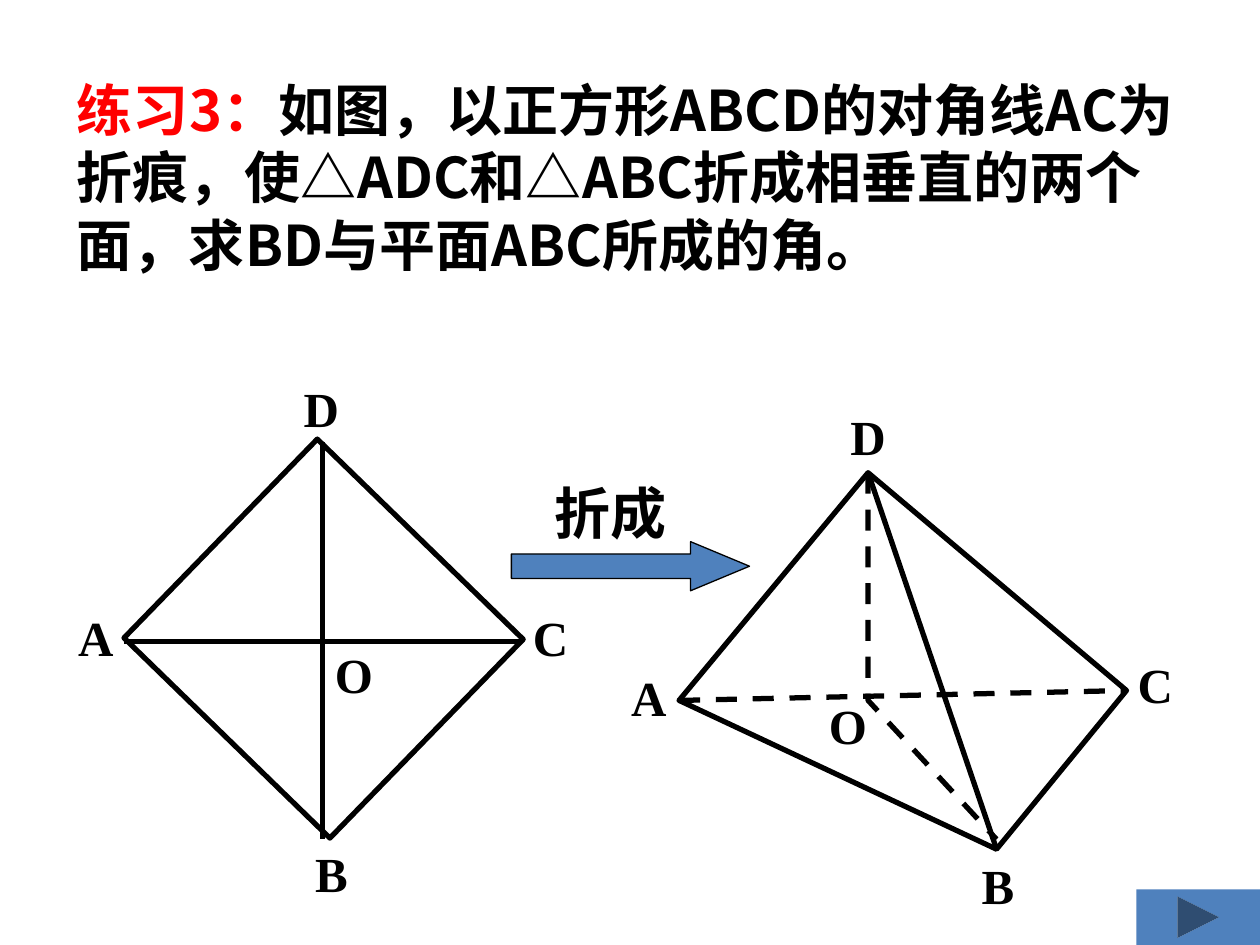
from lxml.etree import SubElement
from pptx import Presentation
from pptx.dml.color import RGBColor
from pptx.enum.dml import MSO_LINE as Dash
from pptx.enum.shapes import MSO_CONNECTOR as Link, MSO_SHAPE as Kind
from pptx.enum.text import MSO_ANCHOR as Anchor, PP_ALIGN as Align
from pptx.oxml.ns import qn
from pptx.util import Cm, Pt

HUES = {"ink": "000000", "red": "FF0000", "blue": "4F81BD"}
SANS, JP, ROMAN = "Noto Sans CJK SC", "Noto Sans CJK JP", "Times New Roman"


def hue(name):
    return RGBColor.from_string(HUES[name])


def style(line, width=3, dash=None):
    for key, value in {"width": Pt(width), "dash_style": dash}.items():
        setattr(line, key, value)
    line.color.rgb = hue("ink")


def write(para, text, size, face, asian=SANS, color="ink"):
    run = para.add_run()
    run.text = text
    for key, value in {"size": Pt(size), "name": face, "bold": True}.items():
        setattr(run.font, key, value)
    run.font.color.rgb = hue(color)
    SubElement(run.font._element, qn("a:ea")).set("typeface", asian)


def text_box(slide, x, y, w, h, wrap=True, align=Align.LEFT):
    frame = slide.shapes.add_textbox(Cm(x), Cm(y), Cm(w), Cm(h)).text_frame
    for key, value in {"word_wrap": wrap, "vertical_anchor": Anchor.TOP}.items():
        setattr(frame, key, value)
    para = frame.paragraphs[0]
    para.alignment = align
    return para


def label(slide, x, y, text):
    """Place a point name centred on x, y."""
    w, h = 1.22, 1.45
    para = text_box(slide, x - w / 2, y - h / 2, w, h, False, Align.CENTER)
    write(para, text, 28, ROMAN)


def segment(slide, start, end, dash=None):
    ends = [Cm(n) for n in (*start, *end)]
    link = slide.shapes.add_connector(Link.STRAIGHT, *ends)
    style(link.line, dash=dash)
    SubElement(link._element.spPr, qn("a:effectLst"))


def outline(slide, points, close, dash=None):
    spots = [(Cm(x), Cm(y)) for x, y in points]
    pen = slide.shapes.build_freeform(*spots[0])
    pen.add_line_segments(spots[1:], close=close)
    shape = pen.convert_to_shape()
    shape.shadow.inherit = False
    shape.fill.background()
    style(shape.line, dash=dash)


def block(slide, kind, x, y, w, h, fill=None):
    shape = slide.shapes.add_shape(kind, Cm(x), Cm(y), Cm(w), Cm(h))
    shape.shadow.inherit = False
    if fill:
        shape.fill.solid()
        shape.fill.fore_color.rgb = hue(fill)
    else:
        shape.fill.background()
    return shape


def task(slide, x, y, w, h):
    para = text_box(slide, x, y, w, h)
    write(para, "练习3：", 32, JP, JP, "red")
    write(para, "如图，以正方形ABCD的对角线AC为折痕，使△ADC和△ABC"
          "折成相垂直的两个面，求BD与平面ABC所成的角。", 32, SANS)


def names(slide, x, y, spots):
    for text, (dx, dy) in spots.items():
        label(slide, x + dx, y + dy, text)


def square(slide, x, y):
    # Sides
    side = block(slide, Kind.RECTANGLE, x + 2.43, y + 2.48, 5.59, 5.79)
    side.rotation = 314.2
    style(side.line)
    # Diagonals AC and DB
    segment(slide, (x + 1.19, y + 5.43), (x + 9.19, y + 5.43))
    segment(slide, (x + 5.2, y + 1.42), (x + 5.2, y + 9.42))
    names(slide, x, y, {"A": (0.63, 5.34), "B": (5.38, 10.11),
                        "C": (9.8, 5.34), "D": (5.18, 0.74),
                        "O": (5.81, 6.1)})


def solid(slide, x, y):
    spots = {"A": (1.29, 6.12), "B": (7.69, 9.12), "C": (10.31, 5.92),
             "D": (5.1, 1.53), "O": (5.1, 6.12), "foot": (7.69, 8.92)}
    at = {key: (x + dx, y + dy) for key, (dx, dy) in spots.items()}
    # Visible edges
    outline(slide, [at[key] for key in "ABCD"], True)
    segment(slide, at["D"], at["B"])
    # Hidden lines
    segment(slide, at["A"], at["C"], Dash.DASH)
    outline(slide, [at["D"], at["O"], at["foot"]], False, Dash.DASH)
    names(slide, x, y, {"A": (0.68, 6.06), "B": (7.72, 9.84),
                        "C": (10.89, 5.8), "D": (5.1, 0.8),
                        "O": (4.67, 6.62)})


def fold(slide, x, y):
    arrow = block(slide, Kind.RIGHT_ARROW, x, y + 1.39, 4.8, 0.99, "blue")
    arrow.adjustments[0], arrow.adjustments[1] = 0.5, 1.2
    style(arrow.line, 0.75)
    para = text_box(slide, x + 0.61, y, 2.77, 1.6, False, Align.CENTER)
    write(para, "折成", 32, ROMAN)


def button(slide, x, y, w, h):
    kind = Kind.ACTION_BUTTON_FORWARD_OR_NEXT
    block(slide, kind, x, y, w, h, "blue").line.fill.background()


def main():
    deck = Presentation()
    deck.slide_width, deck.slide_height = Cm(25.4), Cm(19.05)
    slide = deck.slides.add_slide(deck.slide_layouts[6])
    task(slide, 1.3, 1.4, 22.81, 4.32)
    square(slide, 1.3, 7.5)
    solid(slide, 12.4, 8)
    fold(slide, 10.31, 9.53)
    button(slide, 22.91, 17.93, 2.49, 1.12)
    deck.save("out.pptx")


if __name__ == "__main__":
    main()
